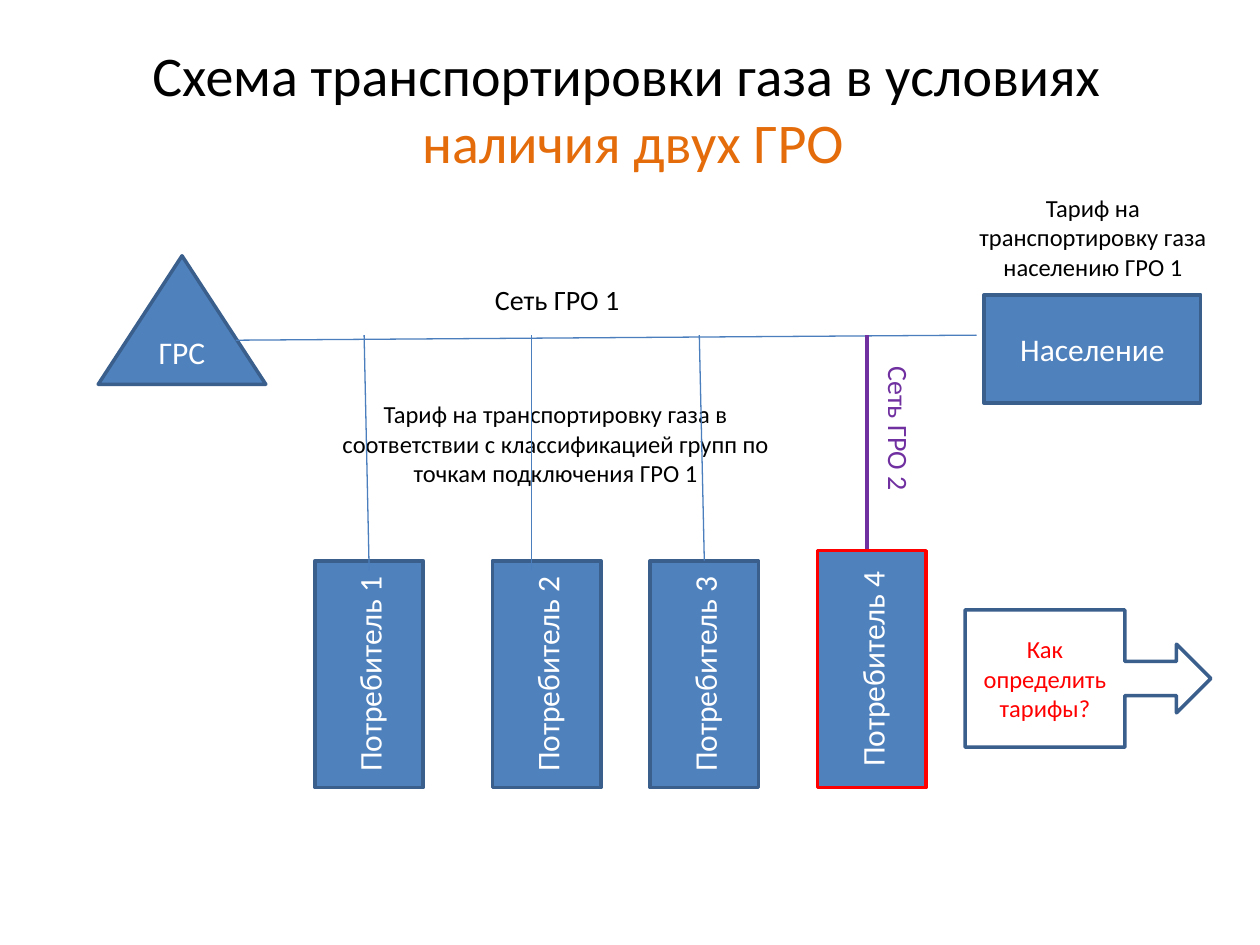
"""Build a slide with the gas transport scheme for two distribution networks."""
from lxml import etree
from pptx import Presentation
from pptx.dml.color import RGBColor
from pptx.enum import shapes as kinds, text as txt
from pptx.oxml.ns import qn
from pptx.util import Inches, Pt

COLORS = {"black": "000000", "white": "FFFFFF", "orange": "E46C0A", "blue": "4F81BD",
          "edge": "3A5F8C", "pipe": "4B7EBC", "purple": "7030A0", "red": "FF0000"}
SHAPE = kinds.MSO_SHAPE
CENTER, LEFT = txt.PP_ALIGN.CENTER, txt.PP_ALIGN.LEFT
MIDDLE, TOP = txt.MSO_ANCHOR.MIDDLE, txt.MSO_ANCHOR.TOP

TITLE = [("Схема транспортировки газа в условиях ", "black"), ("наличия двух ГРО", "orange")]
NODES = [
    ("ГРС", SHAPE.ISOSCELES_TRIANGLE, (0.78, 2.03, 1.33, 1.02), 18, "white", "blue"),
    ("Население", SHAPE.RECTANGLE, (7.81, 2.34, 1.72, 0.86), 18, "white", "blue"),
    ("Как определить тарифы?", SHAPE.RIGHT_ARROW_CALLOUT, (7.66, 4.84, 1.95, 1.09), 14, "red", None),
]
CONSUMERS = [
    ("Потребитель 1", 2.93, 1.8, "edge"),
    ("Потребитель 2", 4.34, 1.8, "edge"),
    ("Потребитель 3", 5.59, 1.8, "edge"),
    ("Потребитель 4", 6.92, 1.88, "red"),
]
CONSUMER_BOTTOM, CONSUMER_WIDTH = 6.25, 0.86
MAIN_PIPE = ((1.87, 2.7), (7.75, 2.66), "pipe", 0.75)
BRANCH_TOP = 2.66
BRANCHES = [
    (2.89, 2.93, 4.53, "pipe", 0.75),
    (4.22, 4.22, 4.53, "pipe", 0.75),
    (5.55, 5.59, 4.45, "pipe", 0.75),
    (6.88, 6.88, 4.45, "purple", 2),
]
LABELS = [
    ("Тариф на транспортировку газа в соответствии с классификацией групп по точкам подключения ГРО 1",
     (2.42, 3.12, 3.98, 0.81), 14, "black", CENTER, 0),
    ("Тариф на транспортировку газа населению ГРО 1",
     (7.66, 1.48, 2.03, 0.81), 14, "black", CENTER, 0),
    ("Сеть ГРО 1", (3.83, 2.19, 1.72, 0.37), 16, "black", LEFT, 0),
    ("Сеть ГРО 2", (6.47, 3.29, 1.33, 0.37), 16, "purple", LEFT, 90),
]


def rgb(name):
    return RGBColor.from_string(COLORS[name])


def write(holder, lines, size, align, anchor):
    frame = holder.text_frame
    for key, value in {"word_wrap": True, "vertical_anchor": anchor}.items():
        setattr(frame, key, value)
    paragraph = frame.paragraphs[0]
    paragraph.alignment = align
    for index, (words, color) in enumerate(lines):
        if index:
            paragraph.add_line_break()
        run = paragraph.add_run()
        run.text = words
        for key, value in {"name": "Calibri", "size": Pt(size)}.items():
            setattr(run.font, key, value)
        run.font.color.rgb = rgb(color)


def add_label(slide, lines, box, size, align, anchor=TOP, turn=0):
    label = slide.shapes.add_textbox(*map(Inches, box))
    label.rotation = turn
    write(label, lines, size, align, anchor)


def add_node(slide, words, kind, box, size, color, fill, edge="edge", turn=0):
    node = slide.shapes.add_shape(kind, *map(Inches, box))
    node.rotation = turn
    node.shadow.inherit = False
    if fill:
        node.fill.solid()
        node.fill.fore_color.rgb = rgb(fill)
    else:
        node.fill.background()
    node.line.color.rgb = rgb(edge)
    node.line.width = Pt(2)
    write(node, [(words, color)], size, CENTER, MIDDLE)


def add_pipe(slide, start, end, color, width):
    pipe = slide.shapes.add_connector(kinds.MSO_CONNECTOR.STRAIGHT, *map(Inches, start + end))
    pipe.line.color.rgb = rgb(color)
    pipe.line.width = Pt(width)
    etree.SubElement(pipe._element.spPr, qn("a:effectLst"))


def add_consumer(slide, words, center, length, edge):
    middle = CONSUMER_BOTTOM - length / 2
    box = (center - length / 2, middle - CONSUMER_WIDTH / 2, length, CONSUMER_WIDTH)
    add_node(slide, words, SHAPE.RECTANGLE, box, 18, "white", "blue", edge, 270)


def main():
    deck = Presentation()
    deck.slide_width, deck.slide_height = Inches(10), Inches(7.5)
    slide = deck.slides.add_slide(deck.slide_layouts[6])
    add_label(slide, TITLE, (0.39, 0.23, 9.27, 1.25), 32, CENTER, MIDDLE)
    for node in NODES:
        add_node(slide, *node)
    add_pipe(slide, *MAIN_PIPE)
    for consumer in CONSUMERS[:-1]:
        add_consumer(slide, *consumer)
    for words, box, size, color, align, turn in LABELS:
        add_label(slide, [(words, color)], box, size, align, turn=turn)
    for top_x, bottom_x, bottom, color, width in BRANCHES:
        add_pipe(slide, (top_x, BRANCH_TOP), (bottom_x, bottom), color, width)
    add_consumer(slide, *CONSUMERS[-1])
    deck.save("out.pptx")


if __name__ == "__main__":
    main()
